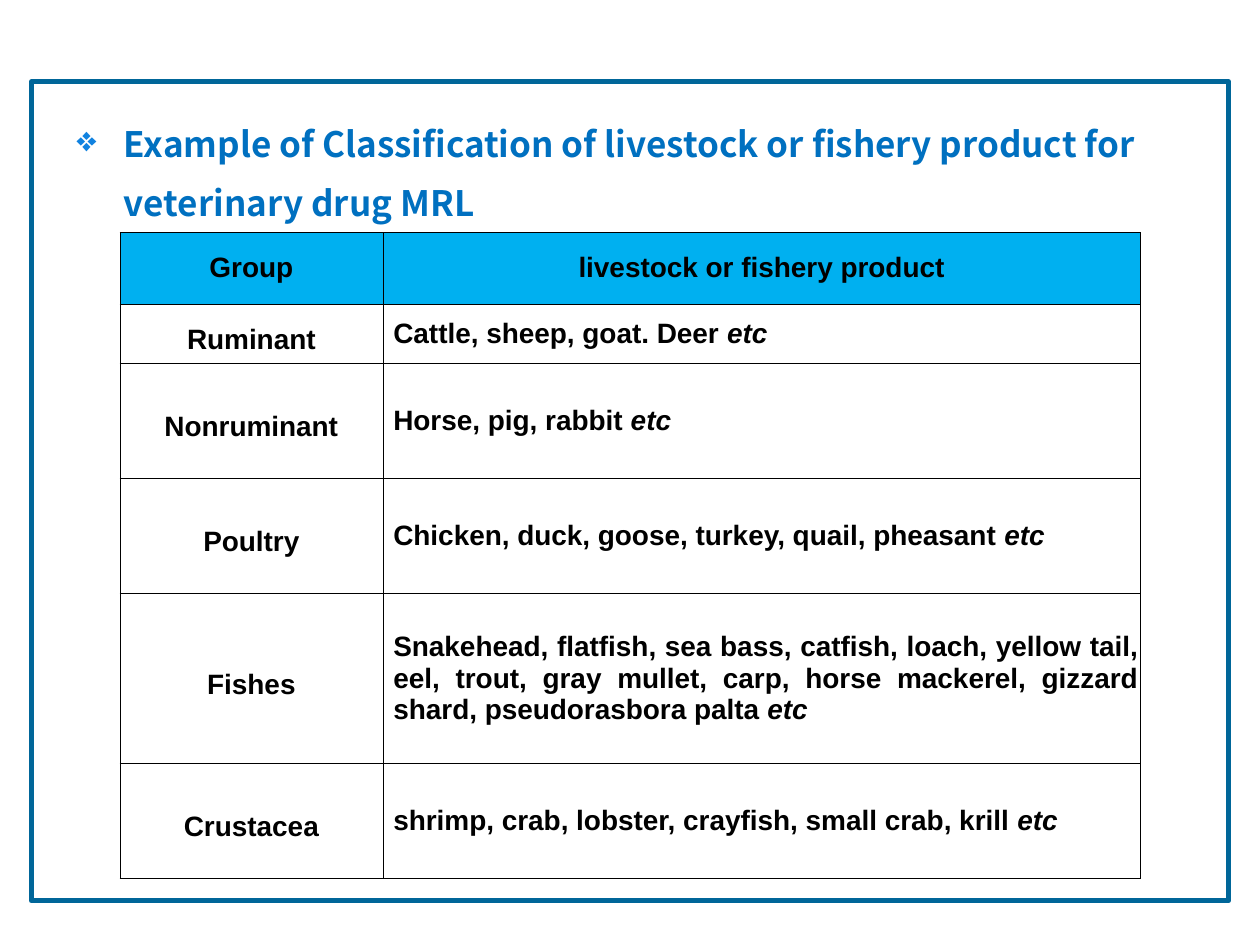
from dataclasses import dataclass

from lxml import etree
from pptx import Presentation
from pptx.dml.color import RGBColor
from pptx.enum import shapes, text
from pptx.oxml import ns
from pptx.util import Pt

COLORS = {
    "frame": "006699",
    "title": "0070C0",
    "bullet": "1082E0",
    "header": "00B0F0",
    "ink": "000000",
}
TITLE = "Example of Classification of livestock or fishery product for veterinary drug MRL"
COL_WIDTHS = (150.5, 432.7)
HEADER_HEIGHT = 41


@dataclass
class Group:
    name: str
    products: str
    height: float = 65.7


GROUPS = [
    Group("Ruminant", "Cattle, sheep, goat. Deer", 33.8),
    Group("Nonruminant", "Horse, pig, rabbit"),
    Group("Poultry", "Chicken, duck, goose, turkey, quail, pheasant"),
    Group(
        "Fishes",
        "Snakehead, flatfish, sea bass, catfish, loach, yellow tail, eel, trout, "
        "gray mullet, carp, horse mackerel, gizzard shard, pseudorasbora palta",
        97.4,
    ),
    Group("Crustacea", "shrimp, crab, lobster, crayfish, small crab, krill"),
]


def rgb(name: str) -> RGBColor:
    """Return the named colour."""
    return RGBColor.from_string(COLORS[name])


def add_text(p, content: str, *, size: float = 16, font: str = "Arial",
             color: str = "ink", italic: bool = False, align=None, spacing=None) -> None:
    """Append a bold run to a paragraph and format both."""
    r = p.add_run()
    r.text = content
    r.font.size, r.font.name = Pt(size), font
    r.font.bold, r.font.italic = True, italic
    r.font.color.rgb = rgb(color)
    if align is not None:
        p.alignment = align
    if spacing is not None:
        p.line_spacing = spacing


def add_element(parent, tag: str, **attrs: str):
    """Append a DrawingML element."""
    return etree.SubElement(parent, ns.qn(f"a:{tag}"), attrs)


def indent(p, left: float, first: float = 0):
    """Set paragraph indents and return its properties."""
    pPr = p._p.get_or_add_pPr()
    pPr.set("marL", str(Pt(left)))
    pPr.set("indent", str(Pt(first)))
    return pPr


def add_frame(s) -> None:
    """Draw the slide border."""
    sp = s.shapes.add_shape(shapes.MSO_SHAPE.RECTANGLE, Pt(18), Pt(46.8), Pt(684), Pt(468))
    sp.shadow.inherit = False
    sp.fill.background()
    sp.line.color.rgb = rgb("frame")
    sp.line.width = Pt(3)


def add_title(s) -> None:
    """Write the bulleted heading."""
    tf = s.shapes.add_textbox(Pt(36.7), Pt(56.9), Pt(646.6), Pt(72)).text_frame
    tf.word_wrap = True
    p = tf.paragraphs[0]
    add_text(p, TITLE, size=20, font="Noto Sans CJK KR", color="title", spacing=1.4)
    p.space_before = Pt(4)
    pPr = indent(p, 27, -27)
    add_element(add_element(pPr, "buClr"), "srgbClr", val=COLORS["bullet"])
    add_element(pPr, "buChar", char="❖")


def style_cell(cell, fill: str | None = None):
    """Set anchor, margins, fill and borders, and return the first paragraph."""
    cell.vertical_anchor = text.MSO_ANCHOR.MIDDLE
    cell.margin_left = cell.margin_right = cell.margin_top = cell.margin_bottom = Pt(0.9)
    if fill:
        cell.fill.solid()
        cell.fill.fore_color.rgb = rgb(fill)
    else:
        cell.fill.background()
    tcPr = cell._tc.get_or_add_tcPr()
    for i, side in enumerate("LRTB"):
        ln = etree.Element(ns.qn(f"a:ln{side}"), w=str(Pt(0.25)))
        add_element(add_element(ln, "solidFill"), "srgbClr", val=COLORS["ink"])
        tcPr.insert(i, ln)
    return cell.text_frame.paragraphs[0]


def add_group_table(s, groups: list[Group]) -> None:
    """Build the table of groups and their products."""
    heights = [HEADER_HEIGHT] + [g.height for g in groups]
    table = s.shapes.add_table(len(heights), len(COL_WIDTHS), Pt(68.4), Pt(132.8),
                               Pt(sum(COL_WIDTHS)), Pt(sum(heights))).table
    for col, width in zip(table.columns, COL_WIDTHS):
        col.width = Pt(width)
    for row, height in zip(table.rows, heights):
        row.height = Pt(height)
    center, justify = text.PP_ALIGN.CENTER, text.PP_ALIGN.JUSTIFY
    for c, label in enumerate(("Group", "livestock or fishery product")):
        add_text(style_cell(table.cell(0, c), "header"), label, align=center)
    for i, g in enumerate(groups, 1):
        add_text(style_cell(table.cell(i, 0)), g.name, align=center, spacing=1.4)
        p = style_cell(table.cell(i, 1))
        add_text(p, g.products + " ", align=justify)
        add_text(p, "etc", italic=True)
        indent(p, 5)


def main() -> None:
    """Build and save the slide."""
    prs = Presentation()
    prs.slide_width, prs.slide_height = Pt(720), Pt(540)
    s = prs.slides.add_slide(prs.slide_layouts[6])
    add_frame(s)
    add_title(s)
    add_group_table(s, GROUPS)
    prs.save("out.pptx")


if __name__ == "__main__":
    main()
